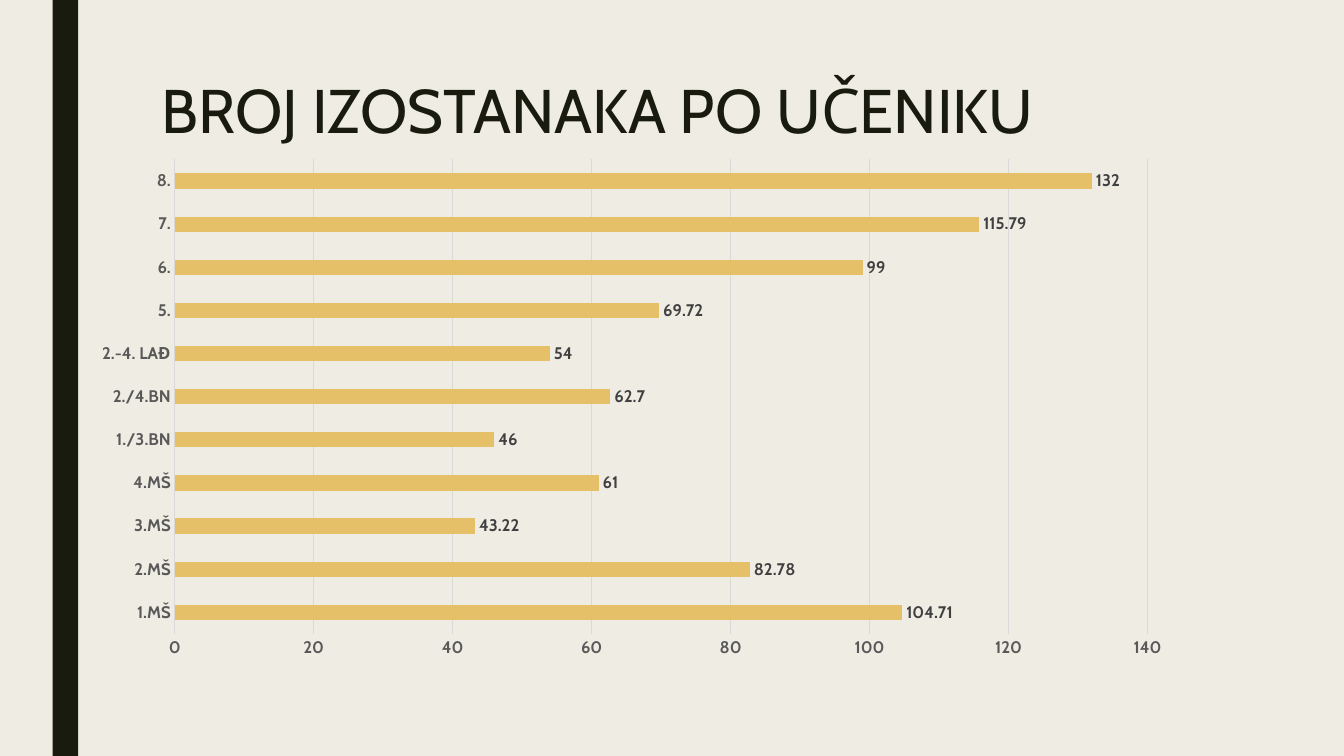
import pptx
import pptx.chart.data
import pptx.dml.color
import pptx.enum.chart
import pptx.enum.shapes
import pptx.enum.text
import pptx.oxml
import pptx.oxml.ns
import pptx.util

Cm = pptx.util.Cm
Pt = pptx.util.Pt
RGBColor = pptx.dml.color.RGBColor
XL = pptx.enum.chart

CREAM = RGBColor(0xEF, 0xED, 0xE3)
DARK = RGBColor(0x19, 0x1B, 0x0E)
GOLD = RGBColor(0xE6, 0xC0, 0x69)
GRID = RGBColor(0xD9, 0xD9, 0xD9)
AXIS_TEXT = RGBColor(0x59, 0x59, 0x59)
LABEL_TEXT = RGBColor(0x40, 0x40, 0x40)

ABSENCES = {
    "1.MŠ": 104.71,
    "2.MŠ": 82.78,
    "3.MŠ": 43.22,
    "4.MŠ": 61,
    "1./3.BN": 46,
    "2./4.BN": 62.7,
    "2.-4. LAĐ": 54,
    "5.": 69.72,
    "6.": 99,
    "7.": 115.79,
    "8.": 132,
}
PLOT_AREA = {"x": 0.08, "y": 0.02, "w": 0.9, "h": 0.9}
PLOT_AREA = {"x": 0.084, "y": 0.018, "w": 0.897, "h": 0.895}


def apply(target, values):
    for name, value in values.items():
        setattr(target, name, value)


class SlideBuilder:
    font_name = "Cabin"

    def __init__(self, prs):
        self.slide = prs.slides.add_slide(prs.slide_layouts[5])
        fill = self.slide.background.fill
        fill.solid()
        fill.fore_color.rgb = CREAM

    def style_font(self, font, size, color, bold=False):
        apply(font, {"name": self.font_name, "size": Pt(size), "bold": bold})
        font.color.rgb = color

    def style_line(self, line):
        line.width = Pt(0.75)
        line.color.rgb = GRID

    def bar(self, left, top, width, height, color):
        sp = self.slide.shapes.add_shape(
            pptx.enum.shapes.MSO_SHAPE.RECTANGLE, left, top, width, height)
        sp.shadow.inherit = False
        sp.fill.solid()
        sp.fill.fore_color.rgb = color
        sp.line.fill.background()

    def title(self, text, left, top, width, height):
        sp = self.slide.shapes.title
        apply(sp, {"left": left, "top": top, "width": width, "height": height})
        tf = sp.text_frame
        apply(tf, {
            "word_wrap": True,
            "auto_size": pptx.enum.text.MSO_AUTO_SIZE.NONE,
            "vertical_anchor": pptx.enum.text.MSO_ANCHOR.TOP,
        })
        p = tf.paragraphs[0]
        apply(p, {"alignment": pptx.enum.text.PP_ALIGN.LEFT, "line_spacing": 0.89})
        r = p.add_run()
        r.text = text
        self.style_font(r.font, 44, DARK)

    def bar_chart(self, values, left, top, width, height):
        data = pptx.chart.data.CategoryChartData()
        data.categories = list(values)
        data.add_series("Series 1", list(values.values()))
        chart = self.slide.shapes.add_chart(
            XL.XL_CHART_TYPE.BAR_CLUSTERED, left, top, width, height, data).chart
        apply(chart, {"has_title": False, "has_legend": False})
        self.style_font(chart.font, 10, RGBColor(0, 0, 0))

        plot = chart.plots[0]
        apply(plot, {"gap_width": 182, "vary_by_categories": False,
                     "has_data_labels": True})
        fill = plot.series[0].format.fill
        fill.solid()
        fill.fore_color.rgb = GOLD
        labels = plot.data_labels
        apply(labels, {"show_value": True, "number_format": "General",
                       "number_format_is_linked": False,
                       "position": XL.XL_LABEL_POSITION.OUTSIDE_END})
        self.style_font(labels.font, 12, LABEL_TEXT, True)

        for axis in (chart.category_axis, chart.value_axis):
            apply(axis, {"major_tick_mark": XL.XL_TICK_MARK.NONE,
                         "minor_tick_mark": XL.XL_TICK_MARK.NONE})
            self.style_font(axis.tick_labels.font, 12, AXIS_TEXT, True)
        self.style_line(chart.category_axis.format.line)
        axis = chart.value_axis
        apply(axis, {"minimum_scale": 0, "maximum_scale": 140, "major_unit": 20,
                     "has_major_gridlines": True})
        axis.format.line.fill.background()
        self.style_line(axis.major_gridlines.format.line)
        self.place_plot(chart)

    def place_plot(self, chart):
        qn = pptx.oxml.ns.qn
        area = chart.element.find(".//" + qn("c:plotArea"))
        for old in area.findall(qn("c:layout")):
            area.remove(old)
        modes = "".join(f'<c:{k}Mode val="edge"/>' for k in "xy")
        sizes = "".join(f'<c:{k} val="{v}"/>' for k, v in PLOT_AREA.items())
        area.insert(0, pptx.oxml.parse_xml(
            f'<c:layout {pptx.oxml.ns.nsdecls("c")}><c:manualLayout>'
            f'<c:layoutTarget val="inner"/>{modes}{sizes}'
            '</c:manualLayout></c:layout>'))


def main():
    prs = pptx.Presentation()
    apply(prs, {"slide_width": Cm(33.87), "slide_height": Cm(19.05)})
    s = SlideBuilder(prs)
    s.bar(Cm(1.33), Cm(0), Cm(0.64), prs.slide_height, DARK)
    s.title("BROJ IZOSTANAKA PO UČENIKU", Cm(3.81), Cm(1.9), Cm(26.67), Cm(4.11))
    s.bar_chart(ABSENCES, Cm(2.11), Cm(3.78), Cm(27.33), Cm(13.36))
    prs.save("out.pptx")


if __name__ == "__main__":
    main()
